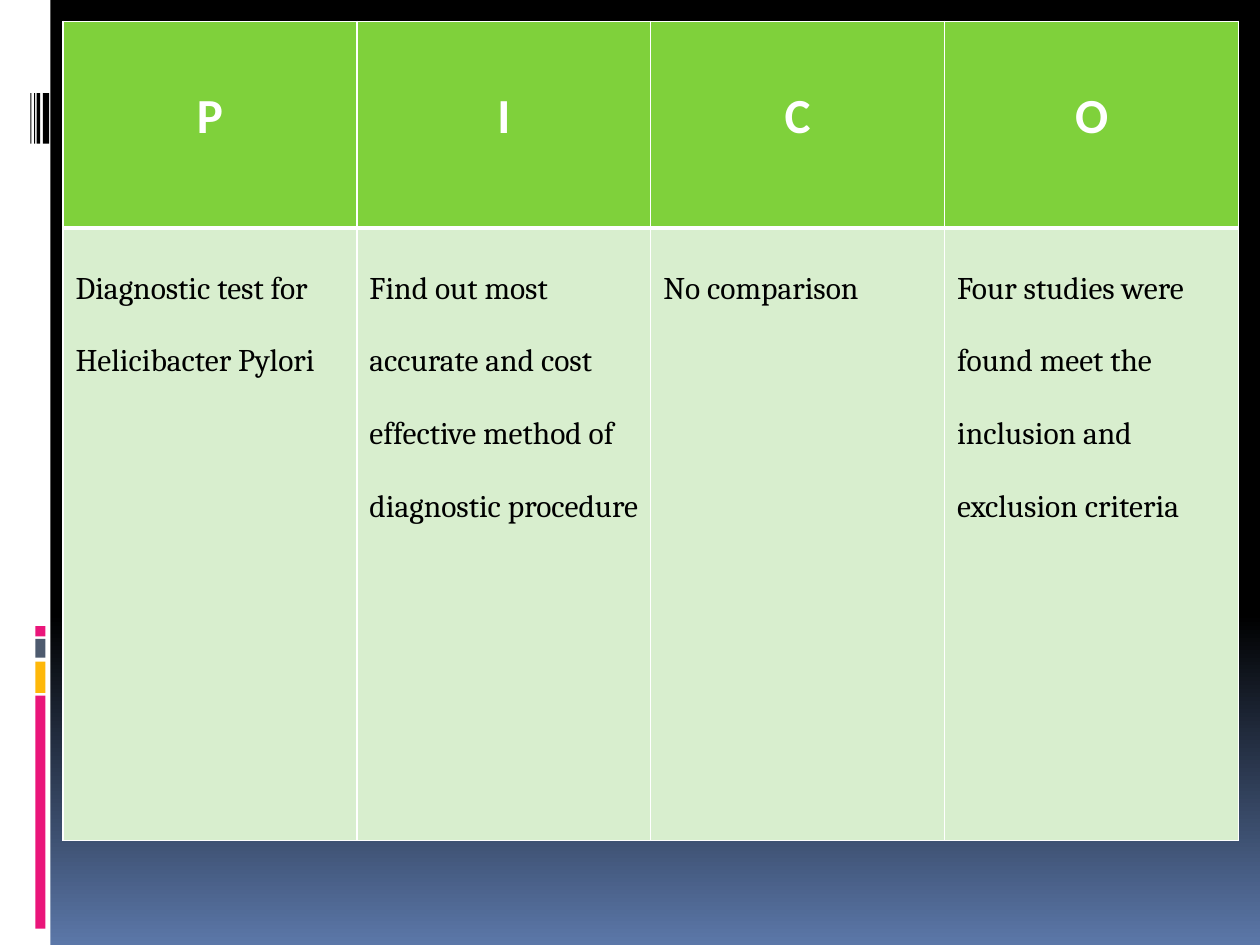
from copy import deepcopy

from lxml.etree import SubElement
from pptx import Presentation
from pptx.dml.color import RGBColor
from pptx.enum.shapes import MSO_SHAPE as Shape
from pptx.enum.text import PP_ALIGN as Align
from pptx.oxml.ns import qn
from pptx.util import Inches, Pt

COLORS = {
    "white": "FFFFFF", "black": "000000", "blue": "5B77A8",
    "pink": "EA157A", "amber": "FEB80A", "slate": "4E5B6F",
    "green": "7FD13B", "pale": "D8EECE",
}
PICO = {
    "P": "Diagnostic test for Helicibacter Pylori",
    "I": "Find out most accurate and cost effective method of diagnostic procedure",
    "C": "No comparison",
    "O": "Four studies were found meet the inclusion and exclusion criteria",
}
BARCODE_BARS = [(0.34, 0.05), (0.29, 0.03), (0.27, 0.01), (0.24, 0.01)]
ACCENT_BARS = [(5.52, 1.85, "pink"), (5.25, 0.25, "amber"),
               (5.07, 0.15, "slate"), (4.97, 0.08, "pink")]


def rgb(name):
    return RGBColor.from_string(COLORS[name])


class SlideBuilder:
    def __init__(self, slide):
        self.slide = slide

    def background(self):
        fill = self.slide.background.fill
        fill.gradient()
        fill.gradient_angle = 270
        stops = fill.gradient_stops
        for stop, position, color in zip(stops, (0, 1), ("black", "blue")):
            stop.position = position
            stop.color.rgb = rgb(color)
        stop_list = self.slide.background._cSld.find(".//" + qn("a:gsLst"))
        middle = deepcopy(stop_list[0])
        middle.set("pos", "65000")
        stop_list.insert(1, middle)

    def bar(self, left, top, width, height, color):
        shape = self.slide.shapes.add_shape(
            Shape.RECTANGLE, Inches(left), Inches(top), Inches(width), Inches(height))
        shape.shadow.inherit = False
        shape.fill.solid()
        shape.fill.fore_color.rgb = rgb(color)
        shape.line.fill.background()

    def borders(self, cell, top, bottom):
        """Draw white cell borders; must run before the cell is filled."""
        properties = cell._tc.get_or_add_tcPr()
        for side, points in (("L", 1), ("R", 1), ("T", top), ("B", bottom)):
            line = SubElement(properties, qn(f"a:ln{side}"), w=str(Pt(points)))
            fill = SubElement(line, qn("a:solidFill"))
            SubElement(fill, qn("a:srgbClr"), val=COLORS["white"])

    def cell(self, cell, text, fill, font_name, size, color, header):
        self.borders(cell, top=1 if header else 3, bottom=3 if header else 1)
        cell.fill.solid()
        cell.fill.fore_color.rgb = rgb(fill)
        cell.text = text
        paragraph = cell.text_frame.paragraphs[0]
        font = paragraph.font
        font.name, font.size, font.bold = font_name, Pt(size), header
        font.color.rgb = rgb(color)
        if header:
            cell.margin_top = Inches(0.52)
            paragraph.alignment = Align.CENTER
        else:
            paragraph.line_spacing = 2.0

    def table(self, columns, left, top, width, row_heights):
        table = self.slide.shapes.add_table(
            2, len(columns), Inches(left), Inches(top),
            Inches(width), Inches(sum(row_heights))).table
        for row, height in zip(table.rows, row_heights):
            row.height = Inches(height)
        for index, (heading, body) in enumerate(columns.items()):
            self.cell(table.cell(0, index), heading, "green", "Calibri", 28, "white", True)
            self.cell(table.cell(1, index), body, "pale", "Cambria", 18, "black", False)


def main():
    presentation = Presentation()
    presentation.slide_width, presentation.slide_height = Inches(10), Inches(7.5)
    builder = SlideBuilder(presentation.slides.add_slide(presentation.slide_layouts[6]))
    builder.background()
    builder.bar(0, 0, 0.4, 7.5, "white")
    for top, height, color in ACCENT_BARS:
        builder.bar(0.28, top, 0.08, height, color)
    for left, width in BARCODE_BARS:
        builder.bar(left, 0.74, width, 0.4, "black")
    builder.table(PICO, 0.5, 0.17, 9.33, (1.64, 4.86))
    presentation.save("out.pptx")


if __name__ == "__main__":
    main()
